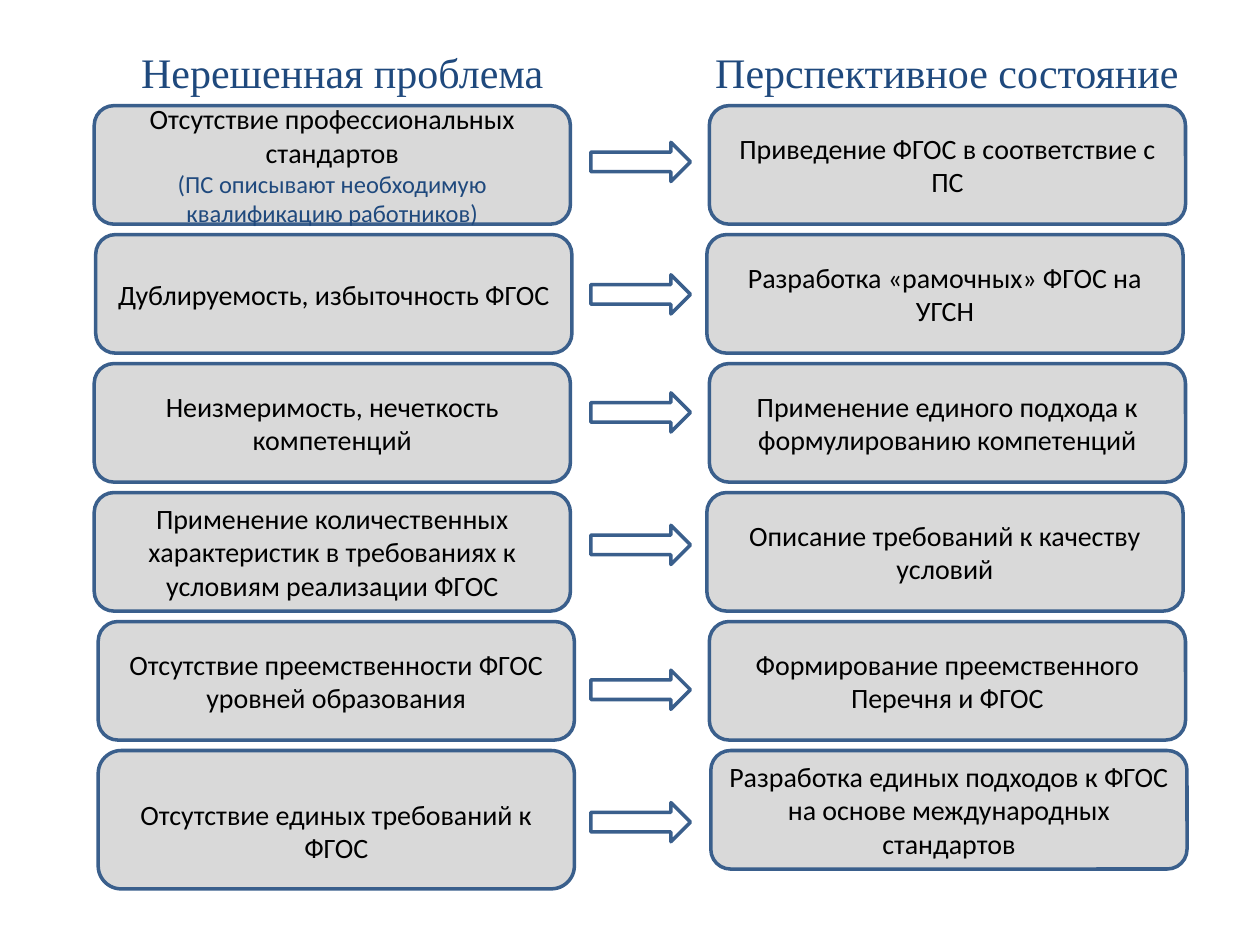
from dataclasses import dataclass

from pptx import Presentation
from pptx import util as u
from pptx.dml.color import RGBColor
from pptx.enum import shapes, text


@dataclass(frozen=True)
class Theme:
    heading_font: str = "Times New Roman"
    body_font: str = "Calibri"
    heading_size: int = 24
    body_size: int = 16
    note_size: int = 14
    accent: str = "1F497D"
    ink: str = "000000"
    box_fill: str = "D9D9D9"
    arrow_fill: str = "FFFFFF"
    outline: str = "3A5F8C"
    outline_width: int = 2


THEME = Theme()

# Grid, in centimetres
FIRST_ROW_TOP, ROW_PITCH = 2.13, 2.6
BOX_WIDTH, BOX_HEIGHT, LAST_PROBLEM_HEIGHT = 9.6, 2.39, 2.79
ARROW_LEFT, ARROW_WIDTH, ARROW_HEIGHT = 11.91, 2.01, 0.79
HEADING_TOP, HEADING_WIDTH, HEADING_HEIGHT = 0.91, 11.2, 1.17

# Placeholder index in the comparison layout: heading, left edge
HEADINGS = {
    1: ("Нерешенная проблема", 1.3),
    3: ("Перспективное состояние", 13.49),
}

STANDARDS_NOTE = "(ПС описывают необходимую квалификацию работников)"

# Problem, its left edge, prospect, its left edge, arrow top
ROWS = [
    ("Отсутствие профессиональных стандартов", 1.9,
     "Приведение ФГОС в соответствие с ПС", 14.3, 2.87),
    ("Дублируемость, избыточность ФГОС", 1.93,
     "Разработка «рамочных» ФГОС на УГСН", 14.25, 5.54),
    ("Неизмеримость, нечеткость компетенций", 1.9,
     "Применение единого подхода к формулированию компетенций", 14.3, 7.92),
    ("Применение количественных характеристик в требованиях к условиям "
     "реализации ФГОС", 1.9,
     "Описание требований к качеству условий", 14.25, 10.59),
    ("Отсутствие преемственности ФГОС уровней образования", 1.98,
     "Формирование преемственного Перечня и ФГОС", 14.3, 13.51),
    ("Отсутствие единых требований к ФГОС", 1.98,
     "Разработка единых подходов к ФГОС на основе международных стандартов",
     14.33, 16.18),
]


def style_run(run, font_name, size, color):
    run.font.name = font_name
    run.font.size = u.Pt(size)
    run.font.bold = False
    run.font.color.rgb = RGBColor.from_string(color)


def fill_headings(slide):
    """Fill the two column headings and drop the placeholders left empty."""
    for placeholder in list(slide.placeholders):
        index = placeholder.placeholder_format.idx
        if index not in HEADINGS:
            placeholder.element.getparent().remove(placeholder.element)
            continue
        wording, left = HEADINGS[index]
        placeholder.left, placeholder.top = u.Cm(left), u.Cm(HEADING_TOP)
        placeholder.width = u.Cm(HEADING_WIDTH)
        placeholder.height = u.Cm(HEADING_HEIGHT)
        frame = placeholder.text_frame
        frame.text = wording
        frame.auto_size = text.MSO_AUTO_SIZE.NONE
        frame.vertical_anchor = text.MSO_ANCHOR.BOTTOM
        paragraph = frame.paragraphs[0]
        paragraph.alignment = text.PP_ALIGN.CENTER
        paragraph.space_before = u.Pt(0)
        style_run(paragraph.runs[0], THEME.heading_font, THEME.heading_size,
                  THEME.accent)


def add_outlined(slide, kind, left, top, width, height, fill):
    outlined = slide.shapes.add_shape(
        kind, u.Cm(left), u.Cm(top), u.Cm(width), u.Cm(height))
    outlined.shadow.inherit = False
    outlined.fill.solid()
    outlined.fill.fore_color.rgb = RGBColor.from_string(fill)
    outlined.line.color.rgb = RGBColor.from_string(THEME.outline)
    outlined.line.width = u.Pt(THEME.outline_width)
    return outlined


def add_box(slide, wording, left, top, height=BOX_HEIGHT):
    box = add_outlined(slide, shapes.MSO_SHAPE.ROUNDED_RECTANGLE,
                       left, top, BOX_WIDTH, height, THEME.box_fill)
    frame = box.text_frame
    frame.word_wrap = True
    frame.vertical_anchor = text.MSO_ANCHOR.MIDDLE
    frame.text = wording
    paragraph = frame.paragraphs[0]
    paragraph.alignment = text.PP_ALIGN.CENTER
    style_run(paragraph.runs[0], THEME.body_font, THEME.body_size, THEME.ink)
    return box


def add_note(box, wording):
    """Add a smaller coloured line under the box's own wording."""
    paragraph = box.text_frame.paragraphs[0]
    paragraph.add_line_break()
    note = paragraph.add_run()
    note.text = wording
    style_run(note, THEME.body_font, THEME.note_size, THEME.accent)


def add_arrow(slide, top):
    add_outlined(slide, shapes.MSO_SHAPE.RIGHT_ARROW, ARROW_LEFT, top,
                 ARROW_WIDTH, ARROW_HEIGHT, THEME.arrow_fill)


def main():
    deck = Presentation()
    deck.slide_width, deck.slide_height = u.Cm(25.4), u.Cm(19.05)
    slide = deck.slides.add_slide(deck.slide_layouts.get_by_name("Comparison"))

    # Column headings
    fill_headings(slide)

    # Problem and prospect pairs
    problems = []
    for row, (problem, problem_left, prospect, prospect_left, _) in enumerate(ROWS):
        top = FIRST_ROW_TOP + row * ROW_PITCH
        is_last = row == len(ROWS) - 1
        height = LAST_PROBLEM_HEIGHT if is_last else BOX_HEIGHT
        problems.append(add_box(slide, problem, problem_left, top, height))
        add_box(slide, prospect, prospect_left, top)

    # Exceptions: the note in the first problem, the lowered text in the last
    add_note(problems[0], STANDARDS_NOTE)
    lowered = problems[-1].text_frame
    lowered.vertical_anchor = text.MSO_ANCHOR.TOP
    lowered.margin_top = u.Cm(0.81)

    # Arrows from problem to prospect
    for *_, arrow_top in ROWS:
        add_arrow(slide, arrow_top)

    deck.save("out.pptx")


if __name__ == "__main__":
    main()
